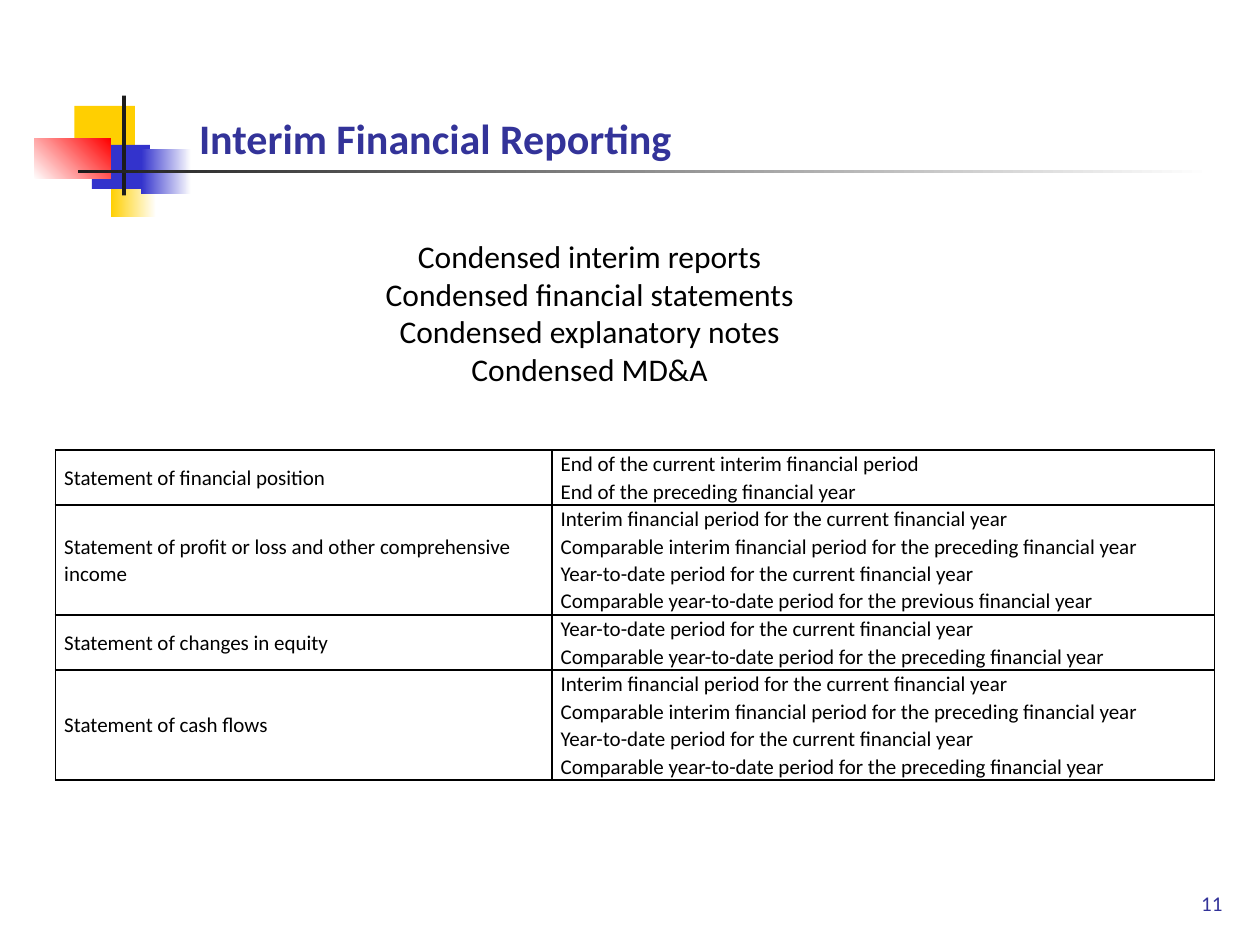
import pptx
import pptx.util
import pptx.dml.color
import pptx.enum.shapes
import pptx.enum.text
import pptx.oxml
import pptx.oxml.ns

Inches, Pt = pptx.util.Inches, pptx.util.Pt
ALIGN, ANCHOR = pptx.enum.text.PP_ALIGN, pptx.enum.text.MSO_ANCHOR
FONT, NAVY, BLACK, WHITE = "Calibri", "333399", "000000", "FFFFFF"
YELLOW, BLUE, RED, CHARCOAL = "FFCF01", "3333CC", "FF0000", "1C1C1C"

# Content
TITLE = "Interim Financial Reporting"
PAGE_NUMBER = "11"
REPORTS = ["Condensed interim reports", "Condensed financial statements",
           "Condensed explanatory notes", "Condensed MD&A"]
CURRENT = "Year-to-date period for the current financial year"
PRECEDING = "Comparable year-to-date period for the preceding financial year"
INTERIM = ["Interim financial period for the current financial year",
           "Comparable interim financial period for the preceding financial year",
           CURRENT]
STATEMENTS = [
    ("Statement of financial position",
     ["End of the current interim financial period",
      "End of the preceding financial year"]),
    ("Statement of profit or loss and other comprehensive income",
     INTERIM + ["Comparable year-to-date period for the previous financial year"]),
    ("Statement of changes in equity", [CURRENT, PRECEDING]),
    ("Statement of cash flows", INTERIM + [PRECEDING]),
]

# Ornament, back to front: left, top, width, height, colours, gradient angle
ORNAMENT = [
    (0.88, 1.2, 0.36, 0.52, (YELLOW, WHITE), 0),
    (0.59, 0.84, 0.48, 0.35, (YELLOW,), 0),
    (0.73, 1.15, 0.46, 0.35, (BLUE,), 0),
    (1.12, 1.18, 0.4, 0.36, (BLUE, WHITE), 0),
    (0.27, 1.1, 0.61, 0.32, (WHITE, RED), 45),
    (0.97, 0.76, 0.03, 0.79, (CHARCOAL,), 0),
    (0.62, 1.35, 9, 0.02, (CHARCOAL, WHITE), 0),
]
TABLE_LEFT, TABLE_TOP = 0.44, 3.57
COLUMNS = (3.94, 5.26)
TABLE_HEIGHT = 2.62


def color(value):
    return pptx.dml.color.RGBColor.from_string(value)


def place(shape, left, top, width, height):
    shape.left, shape.top = Inches(left), Inches(top)
    shape.width, shape.height = Inches(width), Inches(height)


def write(frame, lines, size, ink=BLACK, bold=False, align=ALIGN.LEFT, spacing=1.0):
    frame.word_wrap = True
    for index, line in enumerate(lines):
        para = frame.add_paragraph() if index else frame.paragraphs[0]
        para.alignment, para.line_spacing = align, spacing
        para.space_before = para.space_after = Pt(0)
        span = para.add_run()
        span.text = line
        span.font.name, span.font.size, span.font.bold = FONT, Pt(size), bold
        span.font.color.rgb = color(ink)


def add_block(page, left, top, width, height, colors, angle):
    block = page.shapes.add_shape(
        pptx.enum.shapes.MSO_SHAPE.RECTANGLE,
        Inches(left), Inches(top), Inches(width), Inches(height))
    block.shadow.inherit = False
    block.line.fill.background()
    if len(colors) == 1:
        block.fill.solid()
        block.fill.fore_color.rgb = color(colors[0])
        return
    block.fill.gradient()
    block.fill.gradient_angle = angle
    for position, (stop, value) in enumerate(zip(block.fill.gradient_stops, colors)):
        stop.position = position
        stop.color.rgb = color(value)


def add_borders(cell):
    properties = cell._tc.get_or_add_tcPr()
    for index, side in enumerate(("lnL", "lnR", "lnT", "lnB")):
        properties.insert(index, pptx.oxml.parse_xml(
            f'<a:{side} {pptx.oxml.ns.nsdecls("a")} w="{Pt(1)}"><a:solidFill>'
            f'<a:srgbClr val="{BLACK}"/></a:solidFill></a:{side}>'))


def fill_cell(cell, lines):
    cell.fill.background()
    cell.vertical_anchor = ANCHOR.MIDDLE
    cell.margin_left = cell.margin_right = Inches(0.07)
    cell.margin_top = cell.margin_bottom = 0
    write(cell.text_frame, lines, 12, spacing=1.07)
    add_borders(cell)


def add_statements(page):
    table = page.shapes.add_table(
        len(STATEMENTS), len(COLUMNS), Inches(TABLE_LEFT), Inches(TABLE_TOP),
        Inches(sum(COLUMNS)), Inches(TABLE_HEIGHT)).table
    table.first_row = table.horz_banding = False
    for column, width in zip(table.columns, COLUMNS):
        column.width = Inches(width)
    # Each row is as tall as its share of the period lines
    line_height = TABLE_HEIGHT / sum(len(periods) for _, periods in STATEMENTS)
    for index, (statement, periods) in enumerate(STATEMENTS):
        table.rows[index].height = Inches(line_height * len(periods))
        fill_cell(table.cell(index, 0), [statement])
        fill_cell(table.cell(index, 1), periods)


def main():
    deck = pptx.Presentation()
    deck.slide_width, deck.slide_height = Inches(10), Inches(7.5)
    page = deck.slides.add_slide(deck.slide_layouts[1])
    title, body = page.placeholders

    for block in ORNAMENT:
        add_block(page, *block)

    # Title
    place(title, 1.48, 0.75, 5.98, 0.59)
    title.text_frame.vertical_anchor = ANCHOR.BOTTOM
    title.text_frame.auto_size = pptx.enum.text.MSO_AUTO_SIZE.NONE
    write(title.text_frame, [TITLE], 24, NAVY, bold=True)

    # Centred list without bullets
    place(body, 2.34, 1.83, 4.68, 1.31)
    body.text_frame.auto_size = pptx.enum.text.MSO_AUTO_SIZE.SHAPE_TO_FIT_TEXT
    write(body.text_frame, REPORTS, 18, align=ALIGN.CENTER)
    for para in body.text_frame.paragraphs:
        properties = para._p.get_or_add_pPr()
        properties.set("marL", "0")
        properties.set("indent", "0")
        properties.append(pptx.oxml.parse_xml(
            f'<a:buNone {pptx.oxml.ns.nsdecls("a")}/>'))

    add_statements(page)

    # Page number
    number = page.shapes.add_textbox(0, 0, 0, 0)
    place(number, 7.52, 6.82, 2.28, 0.5)
    number.text_frame.vertical_anchor = ANCHOR.BOTTOM
    write(number.text_frame, [PAGE_NUMBER], 12, NAVY, align=ALIGN.RIGHT)

    deck.save("out.pptx")


if __name__ == "__main__":
    main()
